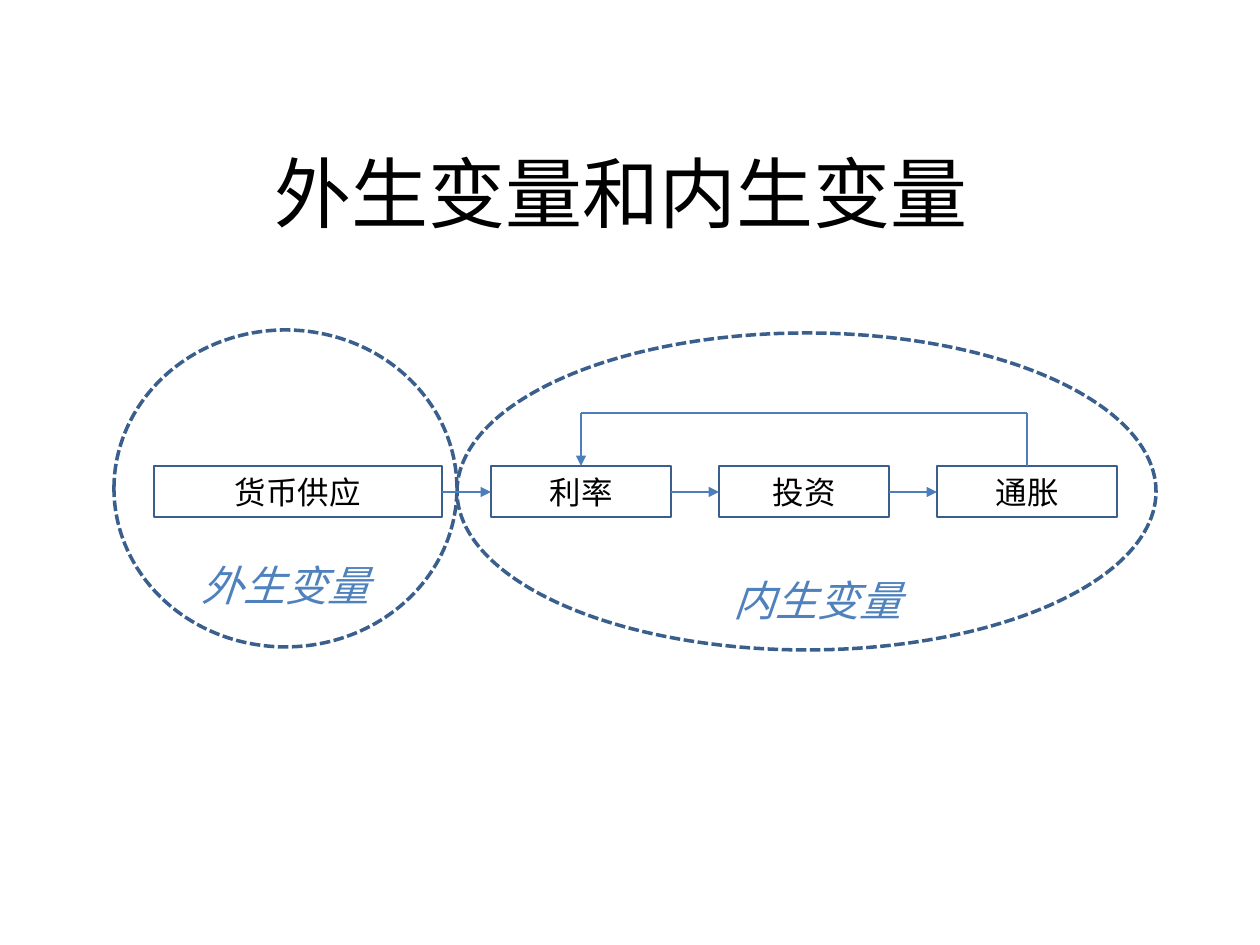
from dataclasses import dataclass
from itertools import pairwise

from lxml import etree
from pptx import Presentation
from pptx.dml.color import RGBColor
from pptx.enum.dml import MSO_LINE
from pptx.enum.shapes import MSO_CONNECTOR, MSO_SHAPE
from pptx.enum.text import MSO_ANCHOR, MSO_AUTO_SIZE, PP_ALIGN
from pptx.oxml.ns import qn
from pptx.util import Pt

DASH = MSO_LINE.SQUARE_DOT
STRAIGHT = MSO_CONNECTOR.STRAIGHT
ELLIPSE, RECTANGLE = MSO_SHAPE.OVAL, MSO_SHAPE.RECTANGLE
TOP, MIDDLE = MSO_ANCHOR.TOP, MSO_ANCHOR.MIDDLE
LEFT, CENTER = PP_ALIGN.LEFT, PP_ALIGN.CENTER
NO_FIT, GROW = MSO_AUTO_SIZE.NONE, MSO_AUTO_SIZE.SHAPE_TO_FIT_TEXT
EMU_PER_PX = 914400 / 126


@dataclass(frozen=True)
class Theme:
    """Colours, font, type sizes and line widths."""

    font: str = "Calibri"
    text: str = "000000"
    label: str = "4F81BD"
    outline: str = "3A5F8C"
    arrow: str = "4B7EBC"
    title_size: int = 44
    label_size: int = 24
    box_size: int = 18
    thin: float = 0.75
    thick: float = 2


def emu(*lengths):
    """Turn px lengths into EMU."""
    return [round(length * EMU_PER_PX) for length in lengths]


class Diagram:
    """Draws the elements of a flow diagram on one slide."""

    def __init__(self, slide, theme):
        """Keep the slide and its theme."""
        self.shapes = slide.shapes
        self.theme = theme

    def fill_text(self, shape, text, size, color, italic=False,
                  align=CENTER, anchor=MIDDLE, fit=GROW):
        """Put one formatted paragraph into a shape."""
        frame = shape.text_frame
        frame_format = {"word_wrap": True, "vertical_anchor": anchor, "auto_size": fit}
        for name, value in frame_format.items():
            setattr(frame, name, value)
        paragraph = frame.paragraphs[0]
        paragraph.alignment = align
        run = paragraph.add_run()
        run.text = text
        font_format = {"name": self.theme.font, "size": Pt(size), "italic": italic}
        for name, value in font_format.items():
            setattr(run.font, name, value)
        run.font.color.rgb = RGBColor.from_string(color)

    def stroke(self, line, color, width):
        """Set the colour and width of a line."""
        line.color.rgb = RGBColor.from_string(color)
        line.width = Pt(width)

    def outlined(self, kind, bounds, width):
        """Add an unfilled shape with an outline."""
        shape = self.shapes.add_shape(kind, *emu(*bounds))
        shape.shadow.inherit = False
        shape.fill.background()
        self.stroke(shape.line, self.theme.outline, width)
        return shape

    def title(self, text, bounds):
        """Add the slide title."""
        shape = self.shapes.add_textbox(*emu(*bounds))
        self.fill_text(shape, text, self.theme.title_size, self.theme.text, fit=NO_FIT)

    def group(self, bounds, text, label_bounds):
        """Add a dashed ellipse with its label."""
        self.outlined(ELLIPSE, bounds, self.theme.thick).line.dash_style = DASH
        label = self.shapes.add_textbox(*emu(*label_bounds))
        self.fill_text(label, text, self.theme.label_size, self.theme.label,
                       italic=True, align=LEFT, anchor=TOP)

    def box(self, text, bounds):
        """Add a box holding one variable."""
        shape = self.outlined(RECTANGLE, bounds, self.theme.thin)
        self.fill_text(shape, text, self.theme.box_size, self.theme.text)

    def connect(self, start, end, arrow=True):
        """Add a straight line, with an arrowhead at its end if wanted."""
        connector = self.shapes.add_connector(STRAIGHT, *emu(*start, *end))
        self.stroke(connector.line, self.theme.arrow, self.theme.thin)
        properties = connector._element.spPr
        if arrow:
            etree.SubElement(properties.find(qn("a:ln")), qn("a:tailEnd"), type="triangle")
        etree.SubElement(properties, qn("a:effectLst"))


def main():
    """Build and save the slide."""
    presentation = Presentation()
    presentation.slide_width, presentation.slide_height = emu(1260, 945)
    slide = presentation.slides.add_slide(presentation.slide_layouts[6])
    diagram = Diagram(slide, Theme())

    diagram.title("外生变量和内生变量", (54, 113, 1134, 158))
    diagram.group((457, 333, 699, 317), "内生变量", (721, 568, 198, 63))
    diagram.group((114, 330, 343, 317), "外生变量", (189, 553, 217, 63))

    box_top, box_height = 466, 51
    boxes = [("货币供应", 154, 288), ("利率", 491, 180), ("投资", 719, 170), ("通胀", 937, 180)]
    for text, left, width in boxes:
        diagram.box(text, (left, box_top, width, box_height))

    flow_y = box_top + box_height // 2 + 1
    for (_, left, width), (_, next_left, _) in pairwise(boxes):
        diagram.connect((left + width, flow_y), (next_left, flow_y))

    rate_x, inflation_x = (left + width // 2 for _, left, width in boxes[1::2])
    feedback_y = 413
    feedback = [(inflation_x, box_top), (inflation_x, feedback_y),
                (rate_x, feedback_y), (rate_x, box_top)]
    for start, end in pairwise(feedback):
        diagram.connect(start, end, arrow=end == feedback[-1])

    presentation.save("out.pptx")


if __name__ == "__main__":
    main()
